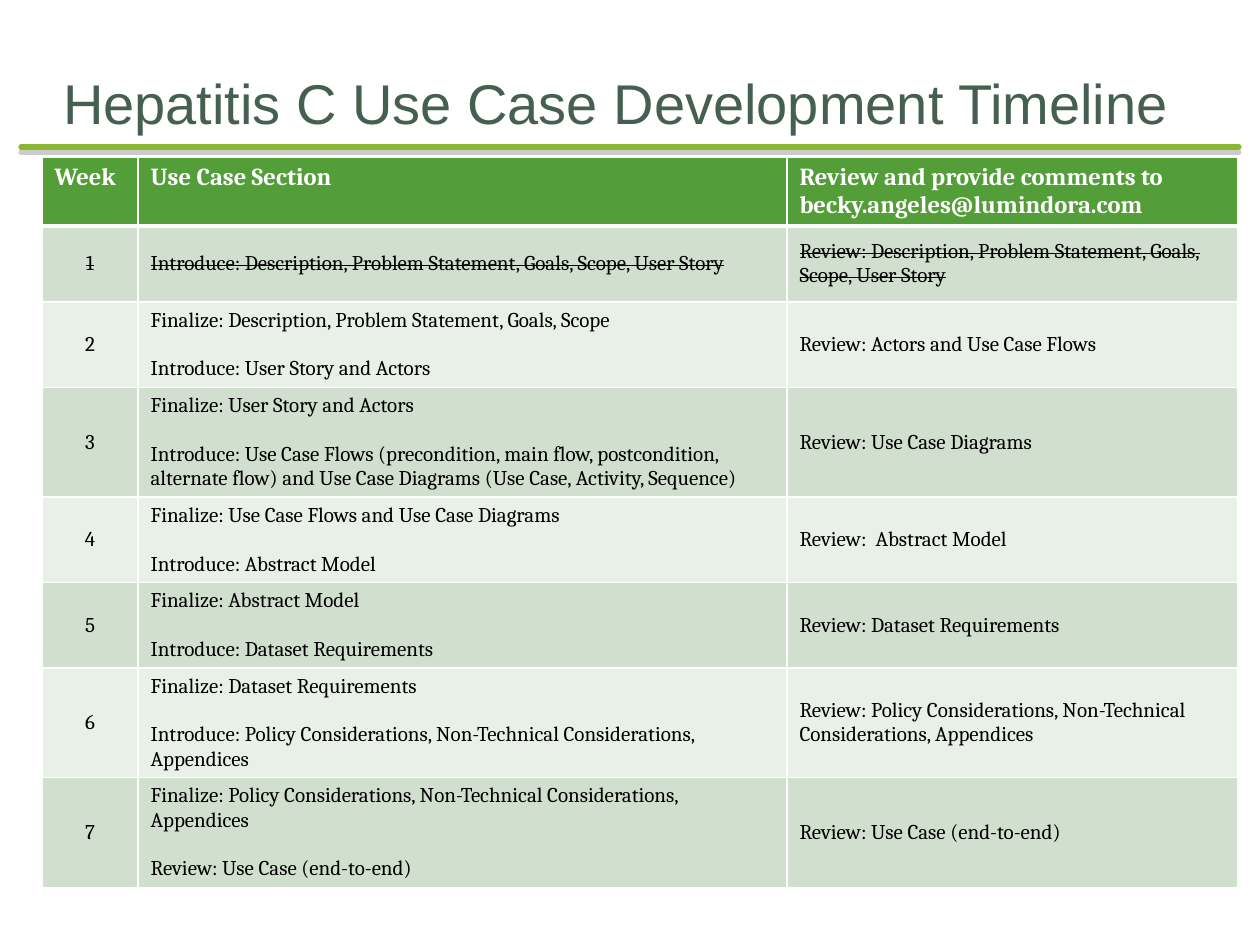
from lxml import etree
from pptx import Presentation
from pptx.dml.color import RGBColor
from pptx.enum.shapes import MSO_CONNECTOR
from pptx.enum.text import MSO_ANCHOR, MSO_AUTO_SIZE, PP_ALIGN
from pptx.oxml import parse_xml
from pptx.oxml.ns import nsdecls, qn
from pptx.util import Pt

PX = 7257
STRAIGHT = MSO_CONNECTOR.STRAIGHT
TOP, MIDDLE, BOTTOM = MSO_ANCHOR.TOP, MSO_ANCHOR.MIDDLE, MSO_ANCHOR.BOTTOM
LEFT, CENTER = PP_ALIGN.LEFT, PP_ALIGN.CENTER
WHITE = RGBColor(0xFF, 0xFF, 0xFF)
BLACK = RGBColor(0x00, 0x00, 0x00)
SLATE = RGBColor(0x45, 0x5F, 0x51)
LIME = RGBColor(0x8A, 0xB8, 0x33)
GREEN = RGBColor(0x54, 0x9E, 0x39)
BANDS = [RGBColor(0xE9, 0xF0, 0xE8), RGBColor(0xD1, 0xDF, 0xCE)]

COLUMN_WIDTHS = [96, 649, 451]
ROWS = [
    (69, ["Week"], ["Use Case Section"],
     ["Review and provide comments to becky.angeles@lumindora.com"]),
    (76, ["1"], ["Introduce: Description, Problem Statement, Goals, Scope, User Story"],
     ["Review: Description, Problem Statement, Goals, Scope, User Story"]),
    (85, ["2"], ["Finalize: Description, Problem Statement, Goals, Scope",
                 "Introduce: User Story and Actors"],
     ["Review: Actors and Use Case Flows"]),
    (109, ["3"], ["Finalize: User Story and Actors",
                  "Introduce: Use Case Flows (precondition, main flow, postcondition, "
                  "alternate flow) and Use Case Diagrams (Use Case, Activity, Sequence)"],
     ["Review: Use Case Diagrams"]),
    (85, ["4"], ["Finalize: Use Case Flows and Use Case Diagrams",
                 "Introduce: Abstract Model"],
     ["Review:  Abstract Model"]),
    (85, ["5"], ["Finalize: Abstract Model", "Introduce: Dataset Requirements"],
     ["Review: Dataset Requirements"]),
    (109, ["6"], ["Finalize: Dataset Requirements",
                  "Introduce: Policy Considerations, Non-Technical Considerations, Appendices"],
     ["Review: Policy Considerations, Non-Technical Considerations, Appendices"]),
    (109, ["7"], ["Finalize: Policy Considerations, Non-Technical Considerations, Appendices",
                  "Review: Use Case (end-to-end)"],
     ["Review: Use Case (end-to-end)"]),
]


def style(span, size, font, color):
    span.font.size = Pt(size)
    span.font.name = font
    span.font.color.rgb = color


def add_borders(cell, bottom_width):
    properties = cell._tc.get_or_add_tcPr()
    widths = {"lnL": 1, "lnR": 1, "lnT": 1, "lnB": bottom_width}
    for position, (side, width) in enumerate(widths.items()):
        properties.insert(position, parse_xml(
            f'<a:{side} {nsdecls("a")} w="{Pt(width)}"><a:solidFill>'
            f'<a:srgbClr val="{WHITE}"/></a:solidFill></a:{side}>'))


deck = Presentation()
deck.slide_width = 1260 * PX
deck.slide_height = 945 * PX
page = deck.slides.add_slide(deck.slide_layouts[5])

title = page.shapes.title
title.left, title.top, title.width, title.height = 63 * PX, 63 * PX, 1144 * PX, 73 * PX
frame = title.text_frame
frame.text = "Hepatitis C Use Case Development Timeline"
frame.auto_size = MSO_AUTO_SIZE.NONE
frame.word_wrap = True
frame.vertical_anchor = BOTTOM
frame.margin_left = frame.margin_right = frame.margin_bottom = 0
frame.margin_top = 6 * PX
frame.paragraphs[0].alignment = LEFT
style(frame.paragraphs[0].runs[0], 32, "Arial", SLATE)

rule = page.shapes.add_connector(STRAIGHT, 21 * PX, 147 * PX, 1239 * PX, 147 * PX)
rule.line.color.rgb = LIME
rule.line.width = Pt(3)
rule.line._get_or_add_ln().set("cap", "rnd")
effects = etree.SubElement(rule._element.spPr, qn("a:effectLst"))
effects.append(parse_xml(
    f'<a:outerShdw {nsdecls("a")} blurRad="0" dist="{Pt(3)}" dir="5400000" rotWithShape="0">'
    '<a:srgbClr val="808080"><a:alpha val="40000"/></a:srgbClr></a:outerShdw>'))

table = page.shapes.add_table(
    len(ROWS), len(COLUMN_WIDTHS), 42 * PX, 157 * PX,
    sum(COLUMN_WIDTHS) * PX, sum(row[0] for row in ROWS) * PX).table
for column, width in zip(table.columns, COLUMN_WIDTHS):
    column.width = width * PX

for week, (height, *entries) in enumerate(ROWS):
    table.rows[week].height = height * PX
    header = week == 0
    for index, lines in enumerate(entries):
        cell = table.cell(week, index)
        cell.fill.solid()
        cell.fill.fore_color.rgb = GREEN if header else BANDS[week % 2]
        cell.vertical_anchor = TOP if header else MIDDLE
        add_borders(cell, 3 if header else 1)
        cell.text_frame.text = "\n".join(lines)
        for order, para in enumerate(cell.text_frame.paragraphs):
            para.alignment = CENTER if index == 0 and not header else LEFT
            para.space_before = Pt(14 * order)
            span = para.runs[0]
            style(span, 14 if header else 12, "Cambria", WHITE if header else BLACK)
            span.font.bold = header
            if week == 1:
                span._r.get_or_add_rPr().set("strike", "sngStrike")

deck.save("out.pptx")
